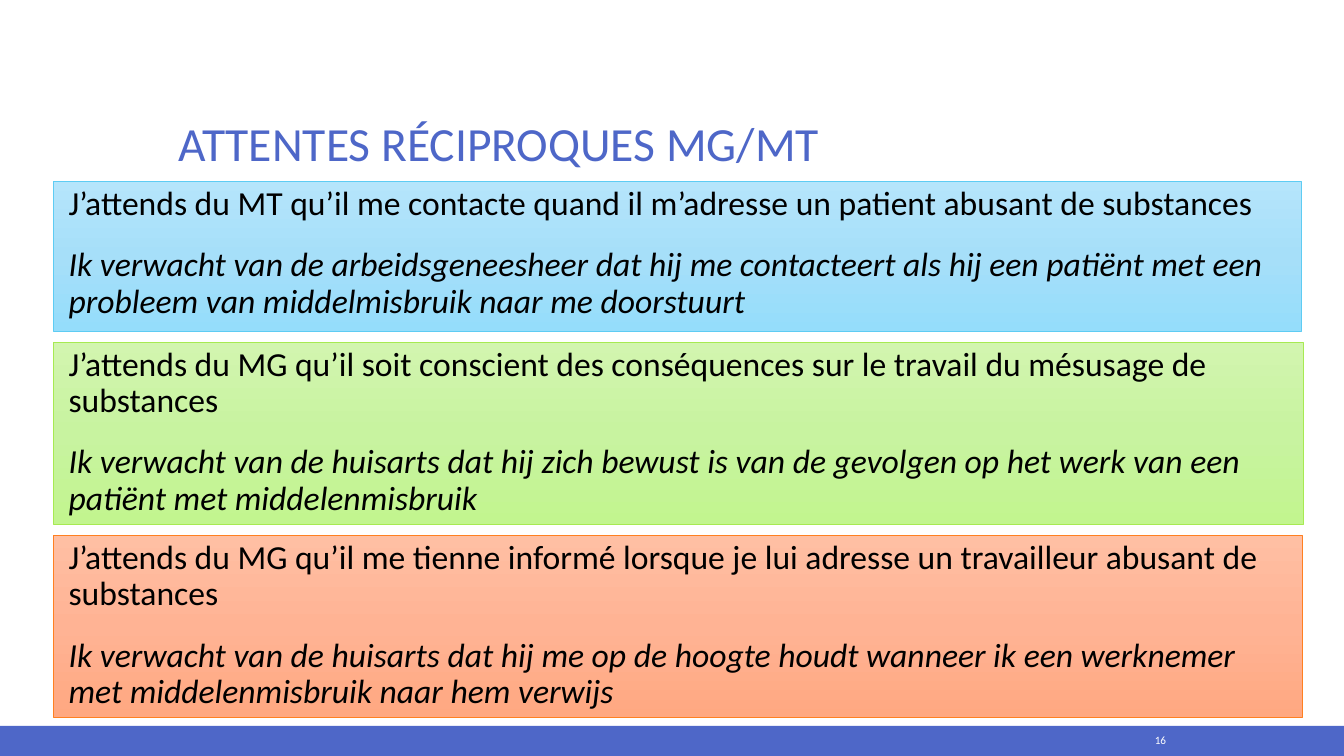
"""Build the slide on mutual expectations between GPs and occupational physicians."""
from copy import deepcopy
from dataclasses import dataclass

from lxml import etree
from pptx import Presentation
from pptx.dml.color import RGBColor
from pptx.enum import shapes, text
from pptx.oxml import ns
from pptx.util import Cm, Pt

COLORS = {
    "accent": "4E67C8",
    "white": "FFFFFF",
    "black": "000000",
    "blue": "5ECCF3",
    "green": "A7EA52",
    "orange": "FF8021",
}
GRADIENTS = {
    "blue": ("B5E5FB", "A6DFF9", "95DDFB"),
    "green": ("D2F5AF", "C8F3A0", "C2F58F"),
    "orange": ("FFBFA3", "FFB394", "FFA881"),
}
FONT = "Calibri"
PANEL_LEFT, PANEL_TOP, PANEL_GAP = 1.35, 4.57, 0.27


@dataclass
class Panel:
    """An expectation in French and Dutch, with sizes in centimetres."""

    color: str
    width: float
    height: float
    french: str
    dutch: str


PANELS = [
    Panel("blue", 31.45, 3.78,
          "J’attends du MT qu’il me contacte quand il m’adresse un patient abusant de substances",
          "Ik verwacht van de arbeidsgeneesheer dat hij me contacteert als hij een patiënt "
          "met een probleem van middelmisbruik naar me doorstuurt"),
    Panel("green", 31.5, 4.6,
          "J’attends du MG qu’il soit conscient des conséquences sur le travail du mésusage "
          "de substances",
          "Ik verwacht van de huisarts dat hij zich bewust is van de gevolgen op het werk "
          "van een patiënt met middelenmisbruik"),
    Panel("orange", 31.47, 4.6,
          "J’attends du MG qu’il me tienne informé lorsque je lui adresse un travailleur "
          "abusant de substances",
          "Ik verwacht van de huisarts dat hij me op de hoogte houdt wanneer ik een "
          "werknemer met middelenmisbruik naar hem verwijs"),
]


def rgb(name: str) -> RGBColor:
    """Look up a named colour."""
    return RGBColor.from_string(COLORS[name])


def style(p, size: float, color: str, align=text.PP_ALIGN.LEFT) -> None:
    """Set the font and alignment of a paragraph."""
    p.alignment = align
    p.font.name = FONT
    p.font.size = Pt(size)
    p.font.color.rgb = rgb(color)


def add_rect(slide, left: float, top: float, width: float, height: float):
    """Add a rectangle without shadow, measured in centimetres."""
    sp = slide.shapes.add_shape(shapes.MSO_SHAPE.RECTANGLE,
                                Cm(left), Cm(top), Cm(width), Cm(height))
    sp.shadow.inherit = False
    return sp


def fill_gradient(sp, stops: tuple[str, ...]) -> None:
    """Fill a shape with evenly spaced stops from top to bottom."""
    sp.fill.gradient()
    sp.fill.gradient_angle = 270
    stop_list: etree._Element = sp.element.find(".//" + ns.qn("a:gsLst"))
    while len(stop_list) < len(stops):
        stop_list.append(deepcopy(stop_list[0]))
    for i, (stop, color) in enumerate(zip(sp.fill.gradient_stops, stops)):
        stop.position = i / (len(stops) - 1)
        stop.color.rgb = RGBColor.from_string(color)


def add_panel(slide, panel: Panel, top: float) -> None:
    """Draw one bilingual panel."""
    sp = add_rect(slide, PANEL_LEFT, top, panel.width, panel.height)
    fill_gradient(sp, GRADIENTS[panel.color])
    sp.line.color.rgb = rgb(panel.color)
    sp.line.width = Pt(0.5)
    tf = sp.text_frame
    tf.word_wrap = True
    tf.vertical_anchor = text.MSO_ANCHOR.TOP
    for p, words in ((tf.paragraphs[0], panel.french), (tf.add_paragraph(), panel.dutch)):
        p.text = words
        style(p, 24, "black")
        p.font.italic = words == panel.dutch
        p.line_spacing = 0.9
        p.space_before = Pt(18)
        p._p.get_or_add_pPr().set("marL", str(Cm(0.13)))


def add_title(slide) -> None:
    """Place and format the title."""
    sp = slide.shapes.title
    sp.left, sp.top, sp.width, sp.height = Cm(4.24), Cm(1.27), Cm(25.4), Cm(3.18)
    tf = sp.text_frame
    tf.text = "ATTENTES RÉCIPROQUES MG/MT"
    tf.auto_size = text.MSO_AUTO_SIZE.NONE
    tf.vertical_anchor = text.MSO_ANCHOR.BOTTOM
    p = tf.paragraphs[0]
    style(p, 34, "accent")
    p.line_spacing = 0.9


def add_footer(slide) -> None:
    """Draw the bottom band and the slide number."""
    band = add_rect(slide, 0, 18.29, 33.87, 0.76)
    band.fill.solid()
    band.fill.fore_color.rgb = rgb("accent")
    band.line.fill.background()
    sp = slide.shapes.add_textbox(Cm(27.48), Cm(18.34), Cm(2.16), Cm(0.64))
    tf = sp.text_frame
    tf.word_wrap = True
    tf.vertical_anchor = text.MSO_ANCHOR.MIDDLE
    p = tf.paragraphs[0]
    p.text = "16"
    style(p, 8, "white", text.PP_ALIGN.RIGHT)


def main() -> None:
    """Build and save the presentation."""
    prs = Presentation()
    prs.slide_width, prs.slide_height = Cm(33.87), Cm(19.05)
    slide = prs.slides.add_slide(prs.slide_layouts[5])
    add_title(slide)
    add_footer(slide)
    top = PANEL_TOP
    for panel in PANELS:
        add_panel(slide, panel, top)
        top += panel.height + PANEL_GAP
    prs.save("out.pptx")


if __name__ == "__main__":
    main()
